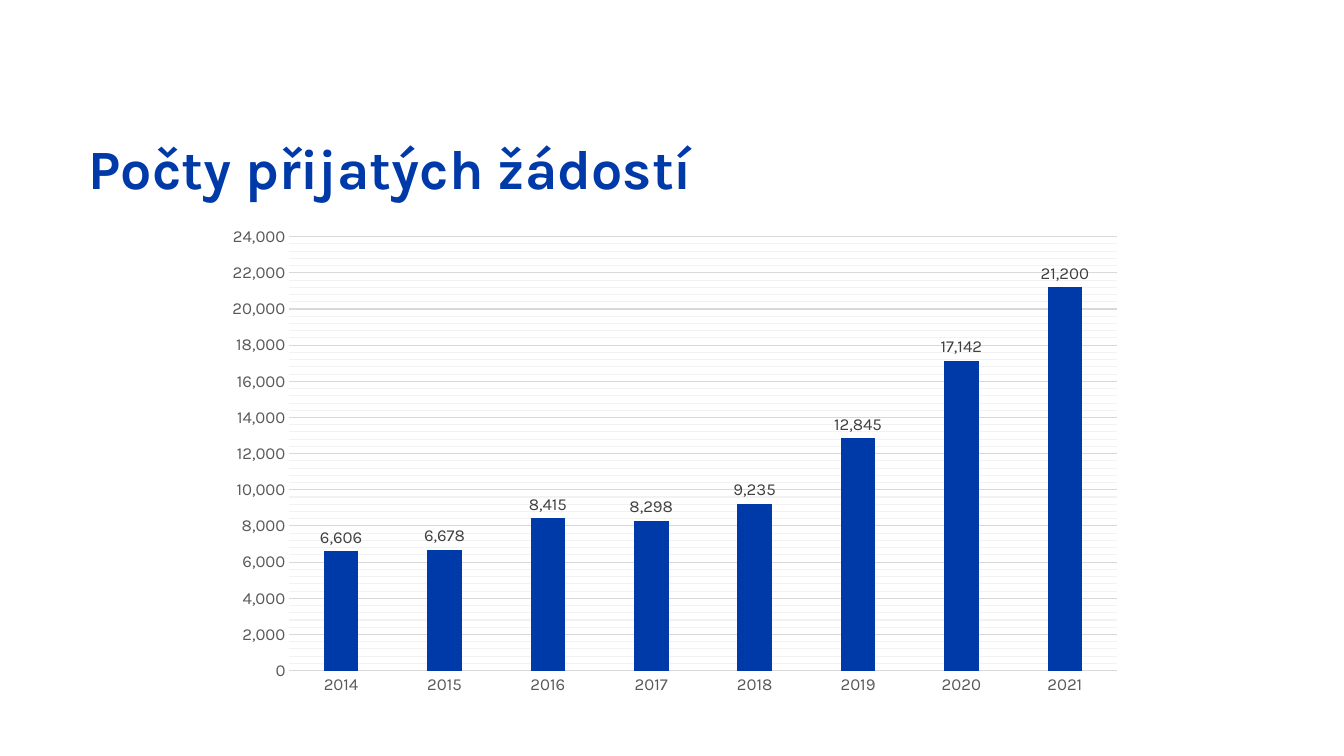
from lxml import etree
from pptx import Presentation
from pptx.chart.data import CategoryChartData
from pptx.dml.color import RGBColor
from pptx.enum.chart import XL_CHART_TYPE as ChartType, XL_LABEL_POSITION as LabelPos, XL_TICK_MARK as Tick
from pptx.enum.text import MSO_ANCHOR as Anchor, MSO_AUTO_SIZE as AutoSize, PP_ALIGN as Align
from pptx.oxml.ns import qn
from pptx.util import Cm, Pt

BLUE = RGBColor(0x00, 0x3A, 0xA9)
DARK = RGBColor(0x40, 0x40, 0x40)
GRAY = RGBColor(0x59, 0x59, 0x59)
GRID = RGBColor(0xD9, 0xD9, 0xD9)
MINOR_GRID = RGBColor(0xF2, 0xF2, 0xF2)
FONT = "Karla"

APPLICATIONS = {
    "2014": 6606, "2015": 6678, "2016": 8415, "2017": 8298,
    "2018": 9235, "2019": 12845, "2020": 17142, "2021": 21200,
}


def set_attrs(obj, values):
    """Set each named attribute on an object."""
    for name, value in values.items():
        setattr(obj, name, value)


def set_font(font, size, color, bold=False):
    """Apply the slide typeface with a size and colour."""
    set_attrs(font, {"name": FONT, "size": Pt(size), "bold": bold})
    font.color.rgb = color


def set_line(line, color):
    """Draw a thin solid line."""
    line.color.rgb = color
    line.width = Pt(0.75)


def set_minor_grid(axis, color):
    """Show thin minor gridlines on an axis."""
    axis.has_minor_gridlines = True
    grid = axis._element.find(qn("c:minorGridlines"))
    sp_pr = etree.SubElement(grid, qn("c:spPr"))
    ln = etree.SubElement(sp_pr, qn("a:ln"), w=str(Pt(0.75)))
    fill = etree.SubElement(ln, qn("a:solidFill"))
    etree.SubElement(fill, qn("a:srgbClr"), val=str(color))


def set_plot_area(chart, x, y, w, h):
    """Fix the inner plot area as fractions of the chart."""
    area = chart._chartSpace.chart.plotArea
    for old in area.findall(qn("c:layout")):
        area.remove(old)
    layout = etree.Element(qn("c:layout"))
    manual = etree.SubElement(layout, qn("c:manualLayout"))
    values = {"layoutTarget": "inner", "xMode": "edge", "yMode": "edge",
              "x": x, "y": y, "w": w, "h": h}
    for tag, value in values.items():
        etree.SubElement(manual, qn(f"c:{tag}")).set("val", str(value))
    area.insert(0, layout)


def add_title(s, text, left, top, width, height):
    """Place the heading in the title placeholder."""
    sp = s.shapes.title
    set_attrs(sp, {"left": left, "top": top, "width": width, "height": height})
    tf = sp.text_frame
    set_attrs(tf, {"word_wrap": True, "auto_size": AutoSize.NONE, "vertical_anchor": Anchor.MIDDLE})
    p = tf.paragraphs[0]
    p.alignment = Align.LEFT
    r = p.add_run()
    r.text = text
    set_font(r.font, 39.6, BLUE, bold=True)


def format_axes(chart):
    """Style the year axis and the value axis with its grid."""
    years, values = chart.category_axis, chart.value_axis
    for axis in (years, values):
        set_attrs(axis, {"major_tick_mark": Tick.NONE, "minor_tick_mark": Tick.NONE})
        set_font(axis.tick_labels.font, 12, GRAY)
    set_line(years.format.line, GRID)
    set_attrs(values, {
        "minimum_scale": 0, "maximum_scale": 24000, "major_unit": 2000, "minor_unit": 400,
        "has_major_gridlines": True,
    })
    values.format.line.fill.background()
    set_line(values.major_gridlines.format.line, GRID)
    set_minor_grid(values, MINOR_GRID)
    set_attrs(values.tick_labels, {"number_format": "#,##0", "number_format_is_linked": False})


def add_applications_chart(s, left, top, width, height):
    """Draw the yearly column chart in the given box."""
    data = CategoryChartData(number_format="#,##0")
    data.categories = list(APPLICATIONS)
    data.add_series("Series 1", list(APPLICATIONS.values()))
    chart = s.shapes.add_chart(ChartType.COLUMN_CLUSTERED, left, top, width, height, data).chart
    set_attrs(chart, {"has_title": False, "has_legend": False})
    set_font(chart.font, 10, RGBColor(0, 0, 0))
    set_plot_area(chart, 0.104, 0.052, 0.887, 0.868)
    format_axes(chart)

    plot = chart.plots[0]
    set_attrs(plot, {"gap_width": 199, "vary_by_categories": False, "has_data_labels": True})
    fill = plot.series[0].format.fill
    fill.solid()
    fill.fore_color.rgb = BLUE
    labels = plot.data_labels
    set_attrs(labels, {
        "show_value": True, "position": LabelPos.OUTSIDE_END,
        "number_format": "#,##0", "number_format_is_linked": False,
    })
    set_font(labels.font, 12, DARK)


def main():
    """Build and save the slide."""
    prs = Presentation()
    set_attrs(prs, {"slide_width": Cm(33.87), "slide_height": Cm(19.05)})
    s = prs.slides.add_slide(prs.slide_layouts[5])
    add_title(s, "Počty přijatých žádostí", Cm(1.98), Cm(3.12), Cm(29.21), Cm(2.18))
    add_applications_chart(s, Cm(4.85), Cm(5.31), Cm(23.5), Cm(12.6))
    prs.save("out.pptx")


if __name__ == "__main__":
    main()
